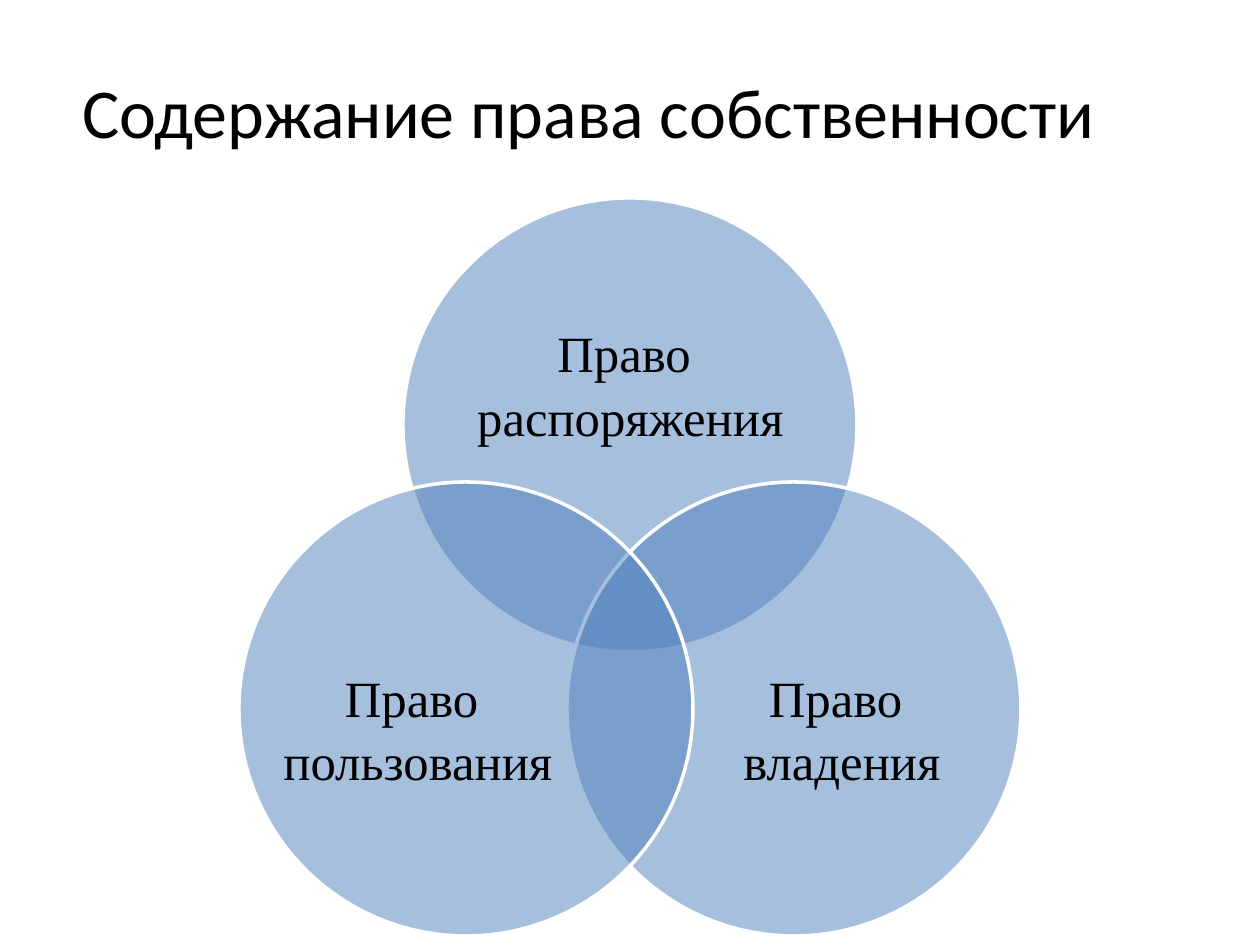
"""Build a slide with a three-circle Venn diagram of property rights."""
import lxml.etree
import pptx
import pptx.dml.color
import pptx.enum.shapes
import pptx.enum.text
import pptx.oxml.ns
import pptx.util

EMU_PER_PX = 914400 / 126
COLORS = {"circle": "4F81BD", "outline": "FFFFFF", "text": "000000"}
DIAMETER = 454
CIRCLES = [
    ((403, 198), (464, 277, 333, 204), "распоряжения"),
    ((567, 482), (706, 599, 272, 249), "владения"),
    ((239, 482), (282, 599, 272, 249), "пользования"),
]


def px(*lengths):
    return [pptx.util.Emu(round(length * EMU_PER_PX)) for length in lengths]


def color(name):
    return pptx.dml.color.RGBColor.from_string(COLORS[name])


def add_circle(page, left, top):
    circle = page.shapes.add_shape(
        pptx.enum.shapes.MSO_SHAPE.OVAL, *px(left, top, DIAMETER, DIAMETER))
    circle.shadow.inherit = False
    circle.fill.solid()
    circle.fill.fore_color.rgb = color("circle")
    tint = circle.fill._xPr.find(".//" + pptx.oxml.ns.qn("a:srgbClr"))
    lxml.etree.SubElement(tint, pptx.oxml.ns.qn("a:alpha"), val="50000")
    circle.line.color.rgb = color("outline")
    circle.line.width = pptx.util.Pt(2)


def add_text(page, place, lines, font, size, gap=0):
    box = page.shapes.add_textbox(*px(*place))
    frame = box.text_frame
    frame.word_wrap = True
    frame.vertical_anchor = pptx.enum.text.MSO_ANCHOR.MIDDLE
    for index, line in enumerate(lines):
        para = frame.add_paragraph() if index else frame.paragraphs[0]
        para.alignment = pptx.enum.text.PP_ALIGN.CENTER
        if index:
            para.space_before = pptx.util.Pt(gap)
        span = para.add_run()
        span.text = line
        span.font.name = font
        span.font.size = pptx.util.Pt(size)
        span.font.color.rgb = color("text")
    return frame


def add_label(page, place, right):
    frame = add_text(page, place, ["Право ", right], "Times New Roman", 29, 1.5)
    frame.margin_left = frame.margin_right = frame.margin_bottom = 0
    frame.margin_top = px(10)[0]


def main():
    deck = pptx.Presentation()
    deck.slide_width, deck.slide_height = px(1260, 945)
    page = deck.slides.add_slide(deck.slide_layouts[6])
    for corner, place, right in CIRCLES:
        add_circle(page, *corner)
        add_label(page, place, right)
    add_text(page, (0, 32, 1177, 157), ["Содержание права собственности"],
             "Calibri", 40)
    deck.save("out.pptx")


if __name__ == "__main__":
    main()
